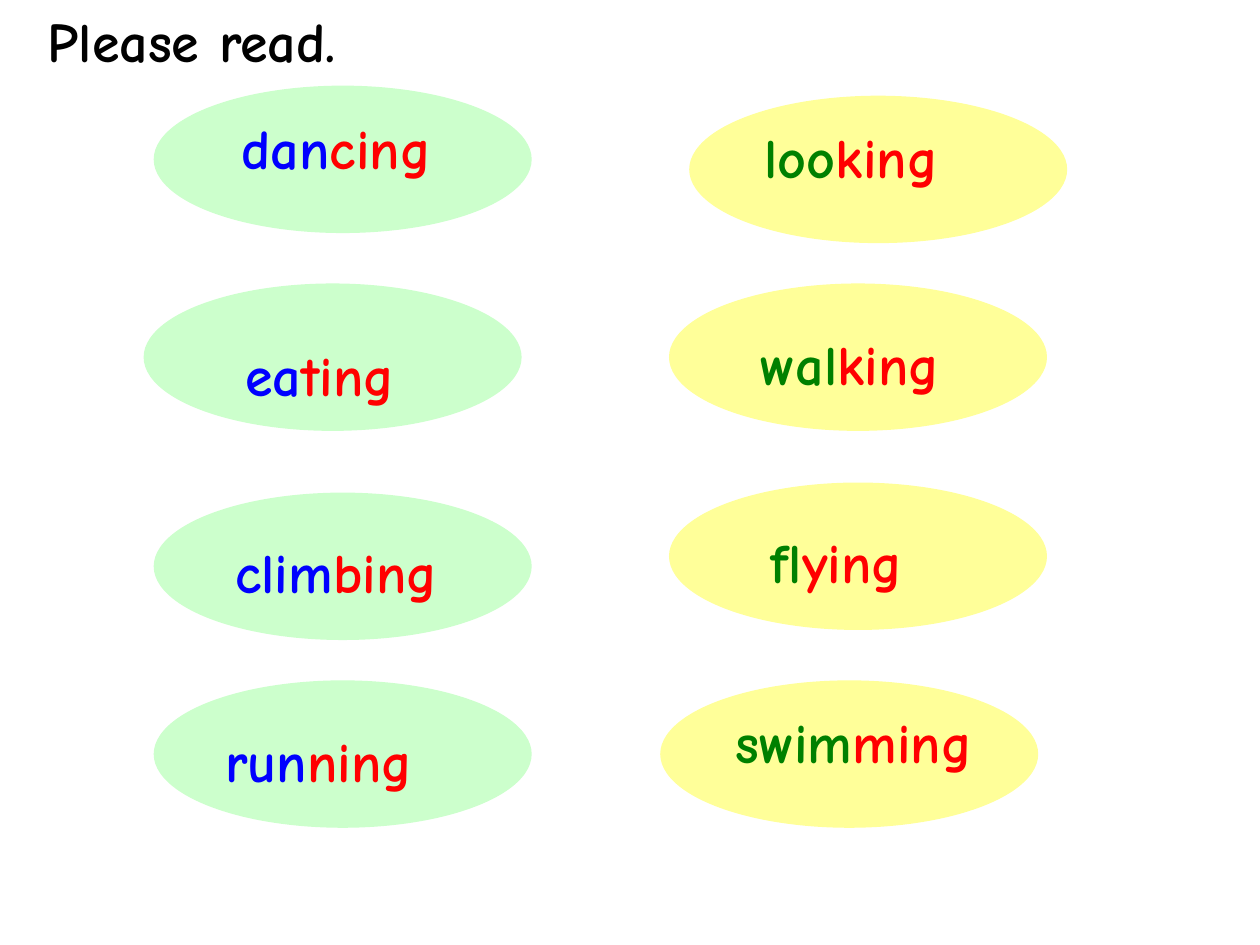
from pptx import Presentation
from pptx.dml.color import RGBColor
from pptx.enum.shapes import MSO_SHAPE
from pptx.enum.text import MSO_ANCHOR, MSO_AUTO_SIZE, PP_ALIGN
from pptx.util import Inches, Pt

THEME = {
    "font": "Comic Neue",
    "size": Pt(32),
    "title": "000000",
    "ending": "FF0000",
    "left": {"oval": "CCFFCC", "stem": "0000FF"},
    "right": {"oval": "FFFF99", "stem": "008000"},
}

prs = Presentation()
prs.slide_width, prs.slide_height = Inches(10), Inches(7.5)
COL, ROW = prs.slide_width / 100, prs.slide_height / 75
OVAL_W, OVAL_H, TEXT_H = 30, 11.7, 6.4


def grid(x, y, w, h):
    return int(x * COL), int(y * ROW), int(w * COL), int(h * ROW)


def style(r, color):
    r.font.name = THEME["font"]
    r.font.size = THEME["size"]
    r.font.bold = True
    r.font.color.rgb = RGBColor.from_string(color)


s = prs.slides.add_slide(prs.slide_layouts[5])
title = s.shapes.title
title.left, title.top, title.width, title.height = grid(2.8, 0, 40.8, TEXT_H)
tf = title.text_frame
tf.text = "Please read."
tf.vertical_anchor = MSO_ANCHOR.TOP
tf.auto_size = MSO_AUTO_SIZE.NONE
tf.paragraphs[0].alignment = PP_ALIGN.LEFT
style(tf.paragraphs[0].runs[0], THEME["title"])

# side, stem, ending, oval x, oval y, text dx, text dy, text width, grouped
words = [
    ("left", "dan", "cing", 12.2, 6.8, 6, 1.7, 21.7, True),
    ("left", "ea", "ting", 11.4, 22.5, 7.1, 4, 16.7, False),
    ("left", "clim", "bing", 12.2, 39.1, 5.5, 3.1, 19.2, False),
    ("right", "swim", "ming", 52.4, 54, 5, 1.7, 21.7, True),
    ("right", "wal", "king", 53.1, 22.5, 6.3, 3.2, 22.5, False),
    ("right", "fl", "ying", 53.1, 38.3, 7.1, 3.1, 22.5, False),
    ("left", "run", "ning", 12.2, 54, 4.7, 3.2, 21.7, False),
    ("right", "loo", "king", 54.7, 7.6, 5, 1.6, 21.7, True),
]

for side, stem, ending, x, y, dx, dy, w, grouped in words:
    colors = THEME[side]
    shapes = s.shapes.add_group_shape().shapes if grouped else s.shapes

    sp = shapes.add_shape(MSO_SHAPE.OVAL, *grid(x, y, OVAL_W, OVAL_H))
    sp.shadow.inherit = False
    sp.fill.solid()
    sp.fill.fore_color.rgb = RGBColor.from_string(colors["oval"])
    sp.line.fill.background()

    tf = shapes.add_textbox(*grid(x + dx, y + dy, w, TEXT_H)).text_frame
    tf.word_wrap = True
    tf.auto_size = MSO_AUTO_SIZE.SHAPE_TO_FIT_TEXT
    p = tf.paragraphs[0]
    for text, color in ((stem, colors["stem"]), (ending, THEME["ending"])):
        r = p.add_run()
        r.text = text
        style(r, color)

prs.save("out.pptx")
